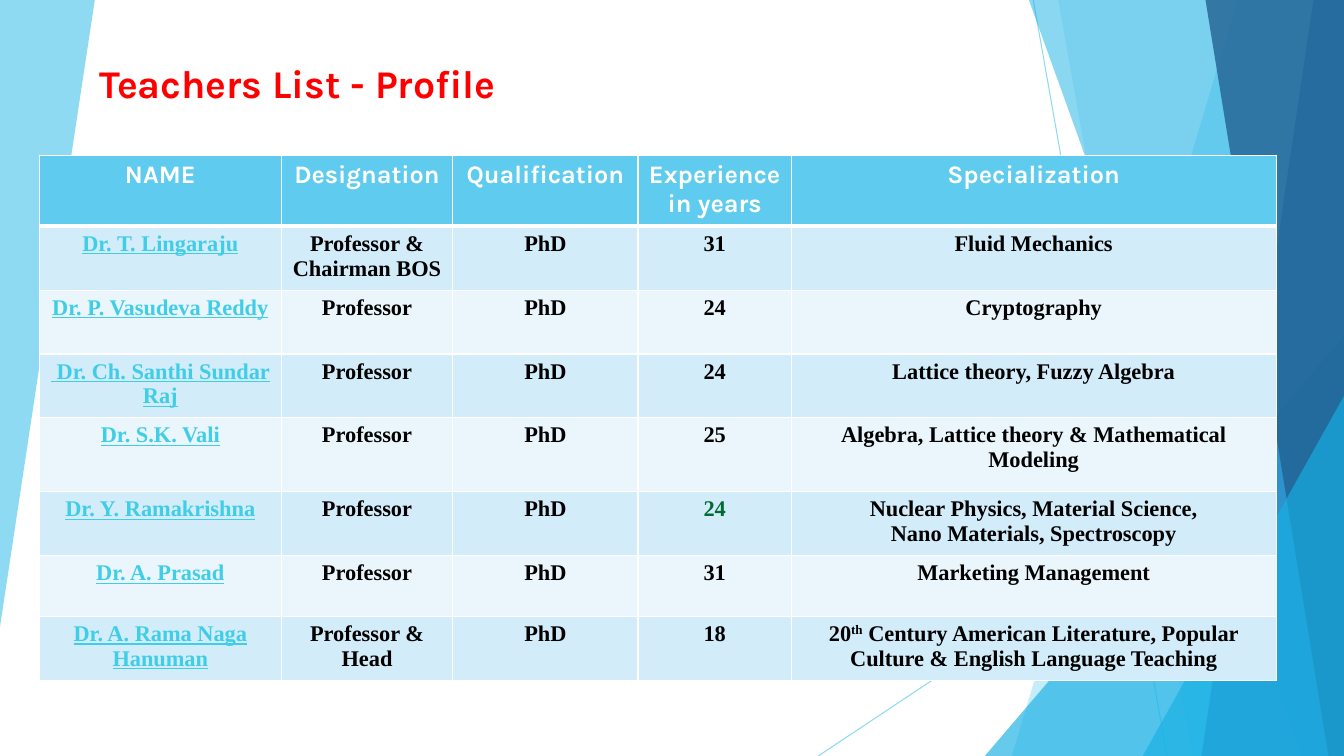
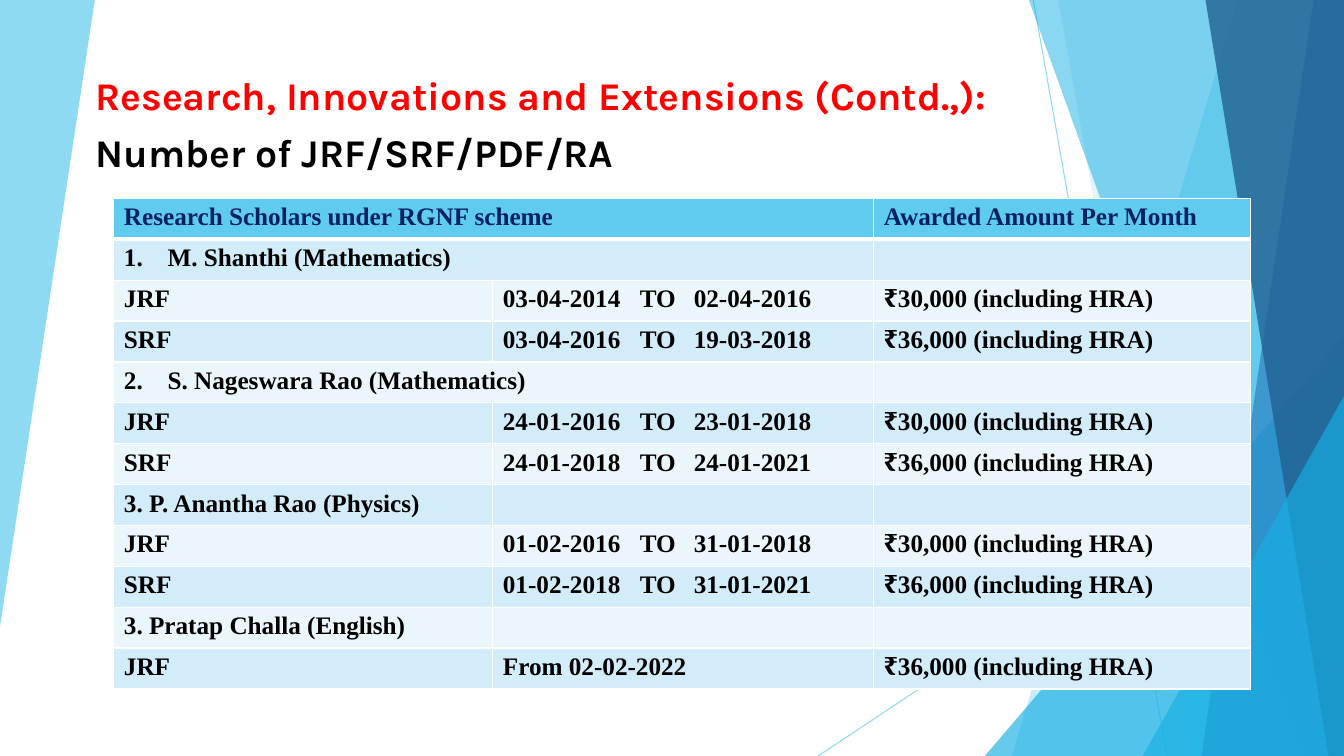
import dataclasses

import lxml.etree
import pptx
import pptx.dml.color
import pptx.enum.shapes
import pptx.enum.text
import pptx.oxml.ns
import pptx.util

Cm, Pt = pptx.util.Cm, pptx.util.Pt
qn = pptx.oxml.ns.qn
CENTER = pptx.enum.text.PP_ALIGN.CENTER
LEFT = pptx.enum.text.PP_ALIGN.LEFT


@dataclasses.dataclass(frozen=True)
class Theme:
    width: float = 33.87
    height: float = 19.05
    display: str = "Karla"
    body: str = "Times New Roman"
    title_size: int = 28
    table_size: int = 18
    small_size: int = 16
    red: str = "FF0000"
    black: str = "000000"
    white: str = "FFFFFF"
    navy: str = "002060"
    green: str = "006C31"
    link: str = "3FCDE7"
    sky: str = "5FCBEF"
    cyan: str = "17B0E4"
    blue: str = "2E83C3"
    deep: str = "226292"
    bands: tuple = ("D2ECF9", "EAF6FC")


T = Theme()


def text_format(name, size, color, **extra):
    return {"name": name, "size": Pt(size), "bold": True, "color": color, **extra}


def rgb(color):
    return pptx.dml.color.RGBColor.from_string(color)


TITLE = text_format(T.display, T.title_size, T.red)
SUBTITLE = {**TITLE, "color": T.black}
TEACHER_HEAD = text_format(T.display, T.table_size, T.white)
TEACHER = text_format(T.body, T.small_size, T.black)
TEACHER_LINK = {**TEACHER, "color": T.link, "underline": True}
SCHOLAR_HEAD = text_format(T.body, T.table_size, T.navy)
SCHOLAR = {**SCHOLAR_HEAD, "color": T.black}


def format_font(font, fmt):
    for key, value in fmt.items():
        if key == "color":
            font.color.rgb = rgb(value)
        else:
            setattr(font, key, value)


def write(tf, text, fmt, align=LEFT, tabs=()):
    """Fill a frame: a newline starts a paragraph, ^ marks toggle superscript."""
    for i, line in enumerate(text.split("\n")):
        p = tf.add_paragraph() if i else tf.paragraphs[0]
        p.alignment = align
        if tabs and "\t" in line:
            tab_list = lxml.etree.SubElement(p._p.get_or_add_pPr(), qn("a:tabLst"))
            for tab in tabs:
                lxml.etree.SubElement(tab_list, qn("a:tab"), pos=str(Cm(tab)), algn="l")
        for j, part in enumerate(line.split("^")):
            r = p.add_run()
            r.text = part
            format_font(r.font, fmt)
            if j % 2:
                r._r.get_or_add_rPr().set("baseline", "30000")


def set_opacity(sp, percent):
    for color in sp.element.iter(qn("a:srgbClr")):
        lxml.etree.SubElement(color, qn("a:alpha"), val=str(percent * 1000))


def paint(sp, color, opacity):
    sp.shadow.inherit = False
    sp.fill.solid()
    sp.fill.fore_color.rgb = rgb(color)
    sp.line.fill.background()
    set_opacity(sp, opacity)


def add_facet(shapes, points, color, opacity):
    first, *rest = [(Cm(x), Cm(y)) for x, y in points]
    builder = shapes.build_freeform(*first, scale=1.0)
    builder.add_line_segments(rest, close=True)
    paint(builder.convert_to_shape(), color, opacity)


def add_side_facet(shapes, top, bottom, color, opacity):
    """Fill from a slanting left edge to the right side of the slide."""
    points = [(top, 0), (T.width, 0), (T.width, T.height), (bottom, T.height)]
    add_facet(shapes, points, color, opacity)


def add_corner(shapes, left, top):
    """Add a triangle that fills the lower right corner of the slide."""
    kind = pptx.enum.shapes.MSO_SHAPE.ISOSCELES_TRIANGLE
    sp = shapes.add_shape(kind, Cm(left), Cm(top), Cm(T.width - left), Cm(T.height - top))
    sp.adjustments[0] = 1.0
    paint(sp, T.cyan, 66)


def add_hairline(shapes, *ends):
    kind = pptx.enum.shapes.MSO_CONNECTOR.STRAIGHT
    line = shapes.add_connector(kind, *map(Cm, ends))
    line.line.color.rgb = rgb(T.sky)
    line.line.width = Pt(0.75)
    lxml.etree.SubElement(line.element.spPr, qn("a:effectLst"))
    set_opacity(line, 70)


def draw_backdrop(shapes):
    add_facet(shapes, [(0, 0), (2.39, 0), (0, 15.8)], T.sky, 70)
    add_hairline(shapes, 26.04, 0, 29.41, T.height)
    add_hairline(shapes, T.width, 10.24, 20.62, T.height)
    add_side_facet(shapes, 31.19, 25.5, T.sky, 36)
    add_side_facet(shapes, 26.67, 30.05, T.sky, 20)
    add_corner(shapes, 24.82, 8.46)
    add_side_facet(shapes, 25.93, 32.79, T.cyan, 50)
    add_side_facet(shapes, 33.1, 30.28, T.blue, 70)
    add_side_facet(shapes, 30.38, 33.48, T.deep, 80)
    add_corner(shapes, 28.8, 9.98)


def move_backdrop_to_layout(slide):
    """Draw the backdrop on a slide, then hand it to the layout all slides use."""
    layout = slide.slide_layout
    for ph in list(layout.placeholders):
        ph.element.getparent().remove(ph.element)
    draw_backdrop(slide.shapes)
    for sp in list(slide.shapes):
        layout.element.cSld.spTree.append(sp.element)


def add_heading(slide, text, left, top, width, fmt=TITLE):
    tf = slide.shapes.add_textbox(Cm(left), Cm(top), Cm(width), Cm(1.45)).text_frame
    tf.word_wrap = True
    write(tf, text, fmt)


def style_cell(cell, row):
    """Give white rules, thicker under the header, and the fill of the row."""
    tcPr = cell._tc.get_or_add_tcPr()
    thick = {0: "lnB", 1: "lnT"}.get(row)
    for side in ("lnL", "lnR", "lnT", "lnB"):
        width = Pt(3 if side == thick else 1)
        ln = lxml.etree.SubElement(tcPr, qn("a:" + side), w=str(width))
        fill = lxml.etree.SubElement(ln, qn("a:solidFill"))
        lxml.etree.SubElement(fill, qn("a:srgbClr"), val=T.white)
    cell.fill.solid()
    cell.fill.fore_color.rgb = rgb(T.bands[(row - 1) % 2] if row else T.sky)


def add_grid(slide, rows, left, top, widths, heights, pick_format, **layout):
    """Add a table; pick_format(row, column) gives the text format of a cell."""
    table = slide.shapes.add_table(len(rows), len(widths), Cm(left), Cm(top),
                                   Cm(sum(widths)), Cm(sum(heights))).table
    for column, width in zip(table.columns, widths):
        column.width = Cm(width)
    for i, (texts, height) in enumerate(zip(rows, heights)):
        table.rows[i].height = Cm(height)
        for j, text in enumerate(texts):
            cell = table.cell(i, j)
            style_cell(cell, i)
            if text:
                write(cell.text_frame, text, pick_format(i, j), **layout)
    return table


TEACHERS = [
    ("NAME", "Designation", "Qualification", "Experience in years", "Specialization"),
    ("Dr. T. Lingaraju", "Professor & Chairman BOS", "PhD", "31", "Fluid Mechanics"),
    ("Dr. P. Vasudeva Reddy", "Professor", "PhD", "24", "Cryptography"),
    (" Dr. Ch. Santhi Sundar Raj", "Professor", "PhD", "24", "Lattice theory, Fuzzy Algebra"),
    ("Dr. S.K. Vali", "Professor", "PhD", "25",
     "Algebra, Lattice theory & Mathematical Modeling"),
    ("Dr. Y. Ramakrishna", "Professor", "PhD", "24",
     "Nuclear Physics, Material Science,\nNano Materials, Spectroscopy"),
    ("Dr. A. Prasad", "Professor", "PhD", "31", "Marketing Management"),
    ("Dr. A. Rama Naga Hanuman", "Professor & Head", "PhD", "18",
     "20^th^ Century American Literature, Popular Culture & English Language Teaching"),
]

JRF_AMOUNT = "₹30,000 (including HRA)"
SRF_AMOUNT = "₹36,000 (including HRA)"
SCHOLARS = [
    ("Research Scholars under RGNF scheme", "", "Awarded Amount Per Month"),
    ("1.\tM. Shanthi (Mathematics)", "", ""),
    ("JRF", "03-04-2014\tTO\t02-04-2016", JRF_AMOUNT),
    ("SRF", "03-04-2016\tTO\t19-03-2018", SRF_AMOUNT),
    ("2.\tS. Nageswara Rao (Mathematics)", "", ""),
    ("JRF", "24-01-2016\tTO\t23-01-2018", JRF_AMOUNT),
    ("SRF", "24-01-2018\tTO\t24-01-2021", SRF_AMOUNT),
    ("3. P. Anantha Rao (Physics)", "", ""),
    ("JRF", "01-02-2016\tTO\t31-01-2018", JRF_AMOUNT),
    ("SRF", "01-02-2018\tTO\t31-01-2021", SRF_AMOUNT),
    ("3. Pratap Challa (English)", "", ""),
    ("JRF", "From 02-02-2022", SRF_AMOUNT),
]


def teacher_format(row, column):
    if row == 0:
        return TEACHER_HEAD
    if column == 0:
        return TEACHER_LINK
    if (row, column) == (5, 3):
        return {**TEACHER, "color": T.green}
    return TEACHER


def scholar_format(row, column):
    return SCHOLAR if row else SCHOLAR_HEAD


def fill_teachers(slide):
    add_heading(slide, "Teachers List - Profile", 2.26, 1.37, 19.69)
    add_grid(slide, TEACHERS, 0.99, 3.91, [6.1, 4.32, 4.67, 3.86, 12.22],
             [1.79, 1.61, 1.61, 1.61, 1.86, 1.61, 1.53, 1.61],
             teacher_format, align=CENTER)


def fill_scholars(slide):
    add_heading(slide, "Research, Innovations and Extensions (Contd.,):", 2.16, 1.68, 23.29)
    add_heading(slide, "Number of JRF/SRF/PDF/RA", 2.16, 3.12, 22.43, SUBTITLE)
    table = add_grid(slide, SCHOLARS, 2.87, 5, [9.55, 9.6, 9.5],
                     [1.03] * len(SCHOLARS), scholar_format, tabs=(1.1, 3.45, 4.81))
    for row in (0, 1, 4):
        table.cell(row, 0).merge(table.cell(row, 1))


def main():
    prs = pptx.Presentation()
    prs.slide_width, prs.slide_height = Cm(T.width), Cm(T.height)
    blank = prs.slide_layouts[6]
    teachers, scholars = (prs.slides.add_slide(blank) for _ in range(2))
    move_backdrop_to_layout(teachers)
    fill_teachers(teachers)
    fill_scholars(scholars)
    prs.save("out.pptx")


if __name__ == "__main__":
    main()
